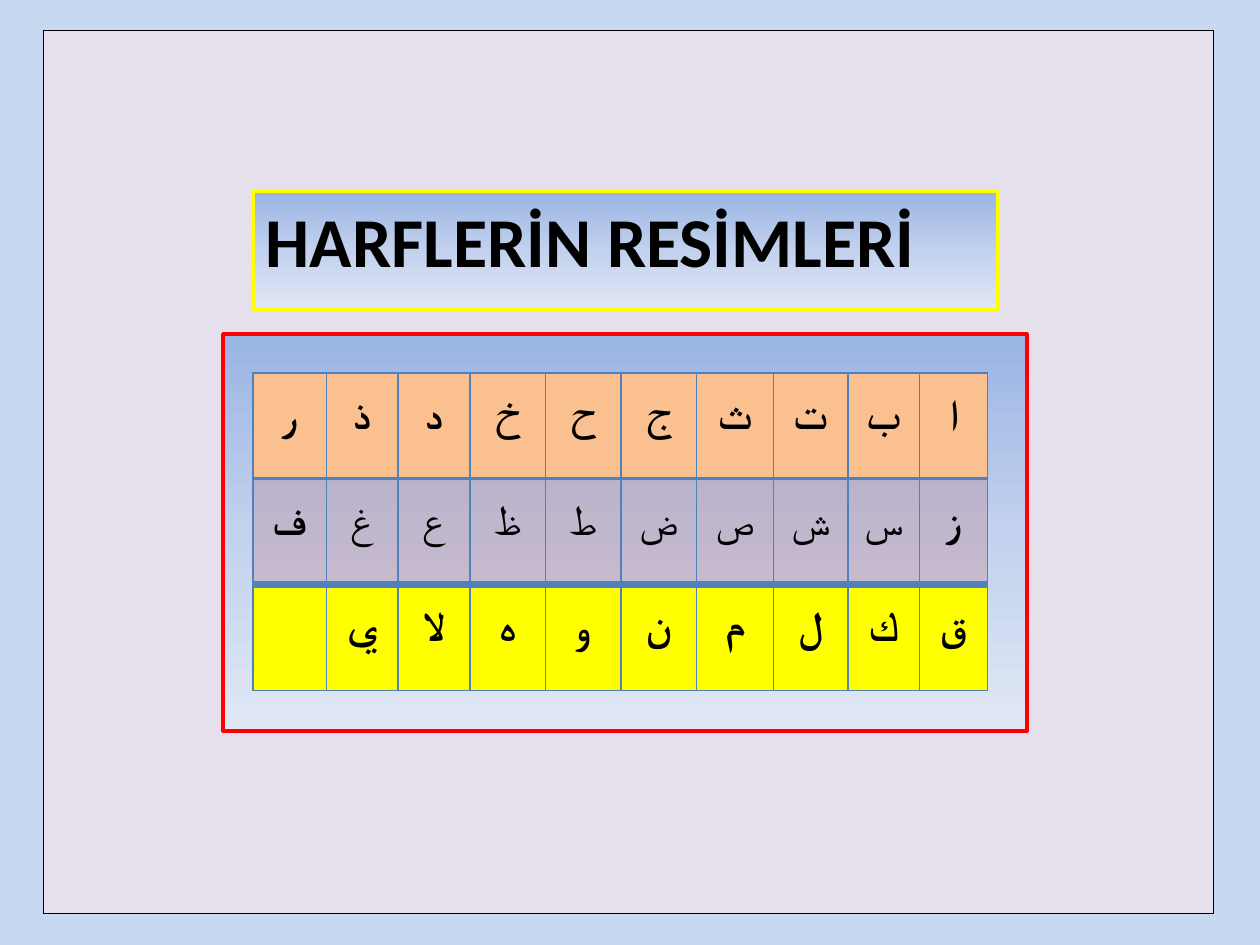
"""Build a slide that shows the Arabic letters in a three-row table."""
from copy import deepcopy

from lxml import etree
from pptx import Presentation
from pptx.dml.color import RGBColor
from pptx.enum.shapes import MSO_SHAPE
from pptx.enum.text import MSO_ANCHOR, MSO_AUTO_SIZE, PP_ALIGN
from pptx.oxml.ns import qn
from pptx.util import Inches, Pt

RECT = MSO_SHAPE.RECTANGLE
TOP, MIDDLE = MSO_ANCHOR.TOP, MSO_ANCHOR.MIDDLE
LEFT, CENTER = PP_ALIGN.LEFT, PP_ALIGN.CENTER
NO_FIT = MSO_AUTO_SIZE.NONE

COLORS = {
    "back": "C6D9F1", "page": "E6E0EC", "ink": "000000", "grid": "4F81BD",
    "title": "FFFF00", "frame": "FF0000",
    "peach": "FAC090", "rose": "C0504D", "yellow": "FFFF00",
}
FADE = [(0, "9AB5E4"), (0.5, "C2D1ED"), (1, "E1E8F5")]
FONT = "Calibri"
TITLE = "HARFLERİN RESİMLERİ"
ROWS = [
    {"text": "ر ذ د خ ح ج ث ت ب ا", "fill": "peach", "alpha": 100,
     "lines": (1, 1, 1, 2), "plain": ""},
    {"text": "ف غ ع ظ ط ض ص ش س ز", "fill": "rose", "alpha": 20,
     "lines": (1, 1, 1, 1), "plain": "غعظطضصشس"},
    {"text": "ي لا ه و ن م ل ك ق", "fill": "yellow", "alpha": 100,
     "lines": (1, 1, 4, 1), "plain": ""},
]
WIDTHS = [0.58, 0.57, 0.57, 0.6, 0.6, 0.6, 0.61, 0.59, 0.57, 0.54]
HEIGHT = 0.84
PAGE = (0.34, 0.24, 9.29, 7.01)
HEAD = (2.01, 1.52, 5.91, 0.94)
FRAME = (1.77, 2.65, 6.38, 3.15)
GRID = (2.01, 2.96, sum(WIDTHS), HEIGHT * len(ROWS))


def color(name):
    return RGBColor.from_string(COLORS[name])


def style(shape, edge):
    shape.fill.gradient()
    shape.fill.gradient_angle = 270
    stops = shape.fill._fill._gradFill.find(qn("a:gsLst"))
    stops.insert(1, deepcopy(stops[0]))
    for stop, (place, tone) in zip(shape.fill.gradient_stops, FADE):
        stop.position = place
        stop.color.rgb = RGBColor.from_string(tone)
    shape.line.color.rgb = color(edge)
    shape.line.width = Pt(2)


def write(para, text, size, bold=True):
    run = para.add_run()
    run.text = text
    run.font.name, run.font.size, run.font.bold = FONT, Pt(size), bold
    run.font.color.rgb = color("ink")


def paint(cell, fill, alpha, edge, lines):
    cell.fill.solid()
    cell.fill.fore_color.rgb = color(fill)
    props = cell._tc.get_or_add_tcPr()
    if alpha < 100:
        tone = props.find(qn("a:solidFill"))[0]
        etree.SubElement(tone, qn("a:alpha")).set("val", str(alpha * 1000))
    for spot, (side, width) in enumerate(zip("LRTB", lines)):
        line = etree.Element(qn("a:ln" + side), w=str(Pt(width)))
        solid = etree.SubElement(line, qn("a:solidFill"))
        etree.SubElement(solid, qn("a:srgbClr"), val=COLORS[edge])
        props.insert(spot, line)


def add_grid(slide, box, widths, count):
    table = slide.shapes.add_table(count, len(widths), *map(Inches, box)).table
    table.first_row = table.horz_banding = False
    for col, width in zip(table.columns, widths):
        col.width = Inches(width)
    return table


def add_title(slide):
    title = slide.shapes.title
    slide.shapes._spTree.append(title._element)
    title.left, title.top, title.width, title.height = map(Inches, HEAD)
    style(title, "title")
    frame = title.text_frame
    frame.auto_size, frame.vertical_anchor = NO_FIT, TOP
    frame.paragraphs[0].alignment = LEFT
    write(frame.paragraphs[0], TITLE, 40)


def add_letters(slide):
    table = add_grid(slide, GRID, WIDTHS, len(ROWS))
    for row, data in zip(table.rows, ROWS):
        row.height = Inches(HEIGHT)
        signs = data["text"].split()
        blanks = len(WIDTHS) - len(signs)
        for cell, sign in zip(row.cells, [""] * blanks + signs):
            paint(cell, data["fill"], data["alpha"], "grid", data["lines"])
            cell.vertical_anchor = MIDDLE
            cell.margin_left = cell.margin_right = Inches(0.07)
            cell.margin_top = cell.margin_bottom = 0
            para = cell.text_frame.paragraphs[0]
            para.alignment, para.line_spacing = CENTER, Pt(14)
            if sign:
                write(para, sign, 24, sign not in data["plain"])


def main():
    deck = Presentation()
    deck.slide_width, deck.slide_height = Inches(10), Inches(7.5)
    slide = deck.slides.add_slide(deck.slide_layouts[5])
    slide.background.fill.solid()
    slide.background.fill.fore_color.rgb = color("back")
    page = add_grid(slide, PAGE, [PAGE[2]], 1)
    paint(page.cell(0, 0), "page", 100, "ink", [0.25] * 4)
    add_title(slide)
    frame = slide.shapes.add_shape(RECT, *map(Inches, FRAME))
    frame.shadow.inherit = False
    style(frame, "frame")
    add_letters(slide)
    deck.save("out.pptx")


if __name__ == "__main__":
    main()
